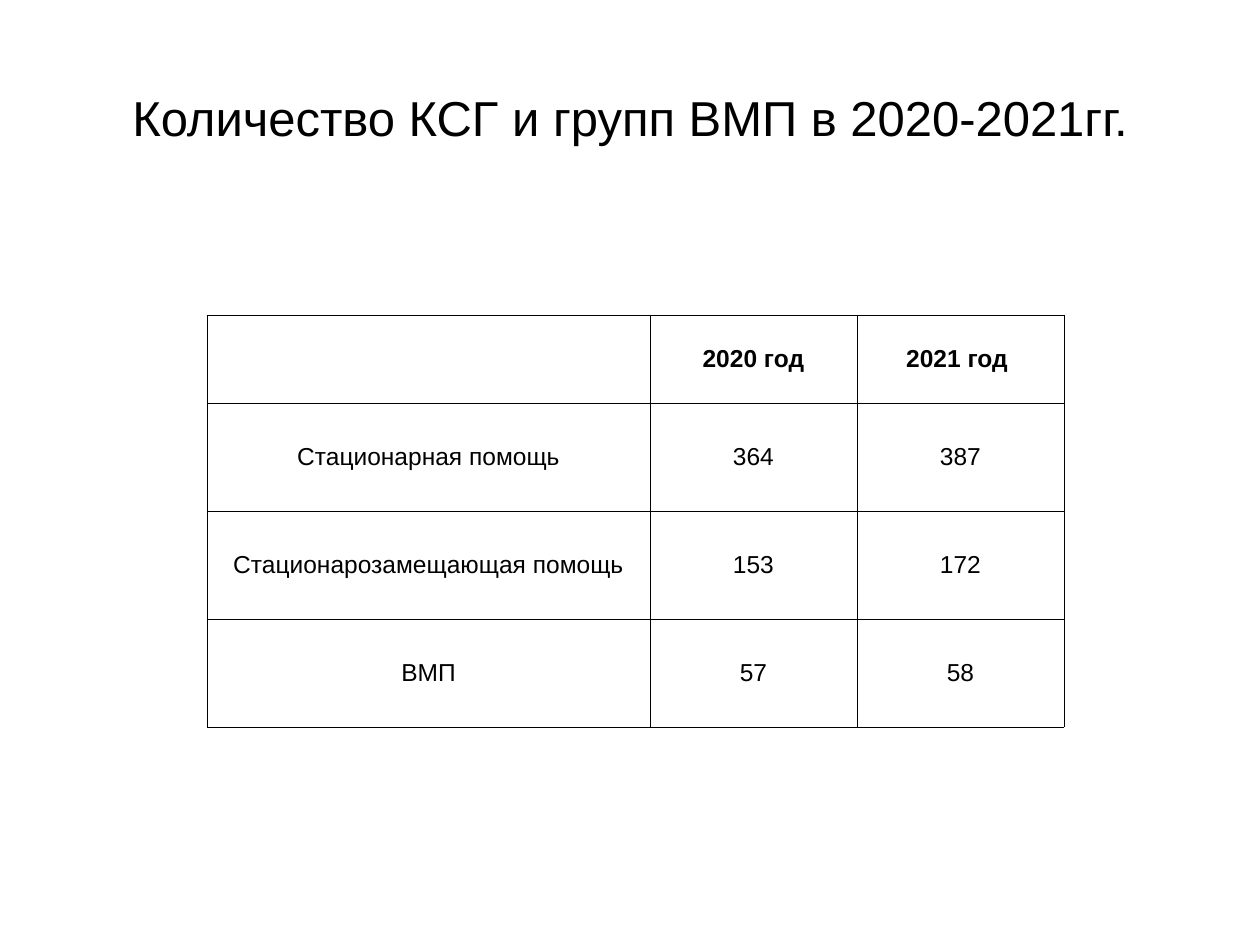
from lxml.etree import SubElement
from pptx import Presentation
from pptx.dml.color import RGBColor
from pptx.enum.text import MSO_ANCHOR, PP_ALIGN
from pptx.oxml.ns import qn
from pptx.util import Pt

PX = 914400 // 126
FONT = "Arial"
COLORS = {"ink": "000000", "paper": "FFFFFF"}
COLS = [443, 207, 207]
ROWS = [88, 108, 108, 108]
DATA = [
    ["", "2020 год", "2021 год "],
    ["Стационарная помощь", "364", "387"],
    ["Стационарозамещающая помощь", "153", "172"],
    ["ВМП", "57", "58"],
]


def px(count):
    return count * PX


def tint(name):
    return RGBColor.from_string(COLORS[name])


def write(frame, text, size, bold=False):
    para = frame.paragraphs[0]
    para.alignment = PP_ALIGN.CENTER
    run = para.add_run()
    run.text = text
    run.font.name = FONT
    run.font.size = Pt(size)
    run.font.bold = bold
    run.font.color.rgb = tint("ink")


def add_title(slide, text, left, top, width, height):
    box = slide.shapes.add_textbox(px(left), px(top), px(width), px(height))
    frame = box.text_frame
    frame.word_wrap = True
    frame.vertical_anchor = MSO_ANCHOR.MIDDLE
    write(frame, text, 28)


def set_border(cell):
    """Draw a thin line on all four sides; call before the fill is set."""
    props = cell._tc.get_or_add_tcPr()
    for side in ("lnL", "lnR", "lnT", "lnB"):
        line = SubElement(props, qn("a:" + side), w=str(Pt(0.5)))
        fill = SubElement(line, qn("a:solidFill"))
        SubElement(fill, qn("a:srgbClr"), val=COLORS["ink"])


def style_cell(cell):
    set_border(cell)
    cell.fill.solid()
    cell.fill.fore_color.rgb = tint("paper")
    cell.vertical_anchor = MSO_ANCHOR.MIDDLE
    cell.margin_left = cell.margin_right = cell.margin_top = px(1)
    cell.margin_bottom = 0


def add_grid(slide, left, top):
    shape = slide.shapes.add_table(len(ROWS), len(COLS), px(left), px(top),
                                   px(sum(COLS)), px(sum(ROWS)))
    table = shape.table
    for col, width in zip(table.columns, COLS):
        col.width = px(width)
    for row, height in zip(table.rows, ROWS):
        row.height = px(height)
    for i, texts in enumerate(DATA):
        for j, text in enumerate(texts):
            cell = table.cell(i, j)
            style_cell(cell)
            if text:
                write(cell.text_frame, text, 14, bold=i == 0)


def main():
    deck = Presentation()
    deck.slide_width, deck.slide_height = px(1260), px(945)
    slide = deck.slides.add_slide(deck.slide_layouts[6])
    add_title(slide, "Количество КСГ и групп ВМП в 2020-2021гг.", 63, 38, 1134, 158)
    add_grid(slide, 207, 315)
    deck.save("out.pptx")


if __name__ == "__main__":
    main()
